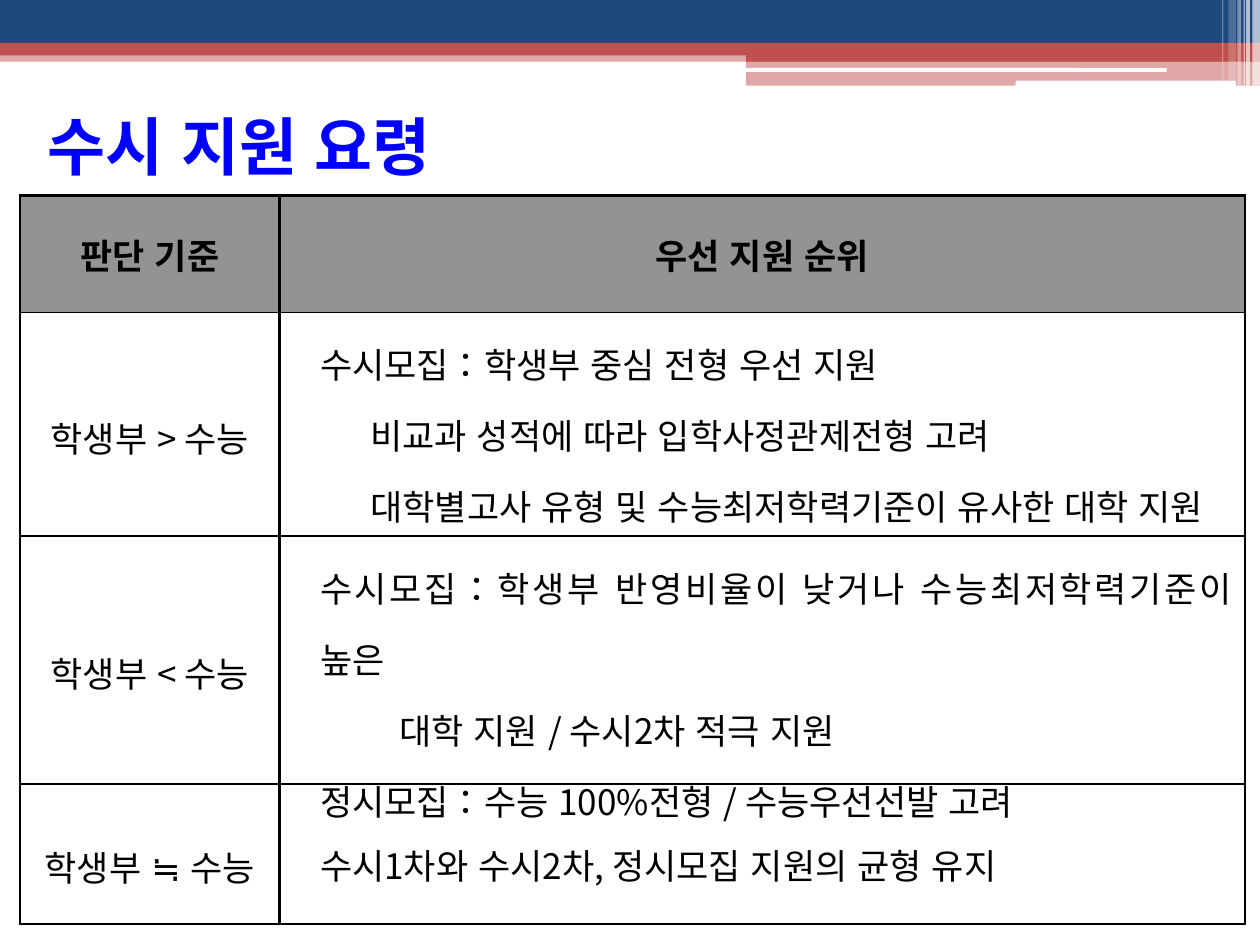
from lxml.etree import SubElement
from pptx import Presentation
from pptx.dml.color import RGBColor
from pptx.enum.lang import MSO_LANGUAGE_ID
from pptx.enum.shapes import MSO_SHAPE
from pptx.enum.text import MSO_ANCHOR, PP_ALIGN
from pptx.oxml.ns import qn
from pptx.util import Inches, Pt

FONT = "Noto Sans CJK KR"
NAVY, RED, WHITE, BLACK = "1F497D", "C0504D", "FFFFFF", "000000"
BLUE, GRAY = "0000FF", "939393"

# Banner bars: left, top, width, height, colour, opacity in percent
BARS = [
    (0, 0.4, 10, 0.09, RED, 50),
    (0, 0, 10, 0.34, NAVY, 100),
    (0, 0.34, 10, 0.1, RED, 100),
    (5.92, 0.39, 4.08, 0.1, RED, 100),
    (5.92, 0.48, 4.08, 0.2, RED, 50),
]
# White rounded strips: left, top, width, height
STRIPS = [(5.91, 0.54, 3.35, 0.03), (8.06, 0.64, 1.75, 0.05)]
# White vertical stripes: left, width, height, opacity in percent
STRIPES = [
    (9.94, 0.06, 0.68, 65),
    (9.89, 0.03, 0.68, 65),
    (9.87, 0.01, 0.68, 60),
    (9.82, 0.03, 0.68, 40),
    (9.75, 0.06, 0.64, 20),
    (9.7, 0.01, 0.64, 30),
]

COLS = [2.06, 7.66]
ROWS = [0.93, 1.77, 1.97, 1.11]
HEADERS = ["판단 기준", "우선 지원 순위"]
# Criterion, bottom margin of the advice, advice lines as (extra indent, text)
ADVICE = [
    ("학생부 > 수능", 0.04, [
        (0, "수시모집：학생부 중심 전형 우선 지원"),
        (0.4, "비교과 성적에 따라 입학사정관제전형 고려"),
        (0.4, "대학별고사 유형 및 수능최저학력기준이 유사한 대학 지원"),
    ]),
    # The last line of this cell runs over the border below
    ("학생부 < 수능", -0.33, [
        (0, "수시모집：학생부 반영비율이 낮거나 수능최저학력기준이 높은 "),
        (0.63, "대학 지원 / 수시2차 적극 지원"),
        (0, "정시모집：수능 100%전형 / 수능우선선발 고려"),
    ]),
    ("학생부 ≒ 수능", 0.04, [
        (0, "수시1차와 수시2차, 정시모집 지원의 균형 유지"),
    ]),
]


def rgb(color):
    return RGBColor.from_string(color)


def add_bar(slide, x, y, w, h, color, opacity=100, kind=MSO_SHAPE.RECTANGLE):
    s = slide.shapes.add_shape(kind, Inches(x), Inches(y), Inches(w), Inches(h))
    s.shadow.inherit = False
    s.fill.solid()
    s.fill.fore_color.rgb = rgb(color)
    s.line.fill.background()
    if opacity < 100:
        clr = s.fill._xPr.find(qn("a:solidFill"))[0]
        SubElement(clr, qn("a:alpha"), val=str(opacity * 1000))


def write(p, text, size, color=BLACK, bold=False, align=PP_ALIGN.CENTER,
          spacing=1.0, indent=0):
    r = p.add_run()
    r.text = text
    r.font.language_id = MSO_LANGUAGE_ID.KOREAN
    p.alignment = align
    p.line_spacing = spacing
    p.font.name = FONT
    p.font.size = Pt(size)
    p.font.bold = bold
    p.font.color.rgb = rgb(color)
    SubElement(p.font._rPr, qn("a:ea"), typeface=FONT)
    pPr = p._p.get_or_add_pPr()
    pPr.set("marL", str(Inches(indent)))
    pPr.set("indent", "0")


def add_title(slide, text):
    s = slide.shapes.title
    s.left, s.top = Inches(0.28), Inches(0.8)
    s.width, s.height = Inches(3.54), Inches(0.71)
    tf = s.text_frame
    tf.vertical_anchor = MSO_ANCHOR.MIDDLE
    write(tf.paragraphs[0], text, 36, BLUE, True, PP_ALIGN.LEFT)


def style_cell(cell, row, fill=None, bottom=0.04):
    cell.vertical_anchor = MSO_ANCHOR.MIDDLE
    cell.margin_top, cell.margin_bottom = Inches(0.04), Inches(bottom)
    # Lines between rows are thinner than the others
    top_w = 1 if row > 0 else 1.7
    bottom_w = 1 if row < len(ROWS) - 1 else 1.7
    tcPr = cell._tc.get_or_add_tcPr()
    for side, w in (("L", 1.7), ("R", 1.7), ("T", top_w), ("B", bottom_w)):
        ln = SubElement(tcPr, qn(f"a:ln{side}"), w=str(Pt(w)))
        SubElement(SubElement(ln, qn("a:solidFill")), qn("a:srgbClr"), val=BLACK)
    if fill:
        cell.fill.solid()
        cell.fill.fore_color.rgb = rgb(fill)
    else:
        cell.fill.background()


def add_advice_table(slide):
    table = slide.shapes.add_table(
        len(ROWS), len(COLS), Inches(0.16), Inches(1.55),
        Inches(sum(COLS)), Inches(sum(ROWS))).table
    for col, w in zip(table.columns, COLS):
        col.width = Inches(w)
    for row, h in zip(table.rows, ROWS):
        row.height = Inches(h)

    # Header row
    for c, text in enumerate(HEADERS):
        cell = table.cell(0, c)
        style_cell(cell, 0, GRAY)
        write(cell.text_frame.paragraphs[0], text, 20, bold=True)

    # One row for each criterion
    for r, (criterion, bottom, lines) in enumerate(ADVICE, start=1):
        left, right = table.cell(r, 0), table.cell(r, 1)
        style_cell(left, r)
        style_cell(right, r, bottom=bottom)
        write(left.text_frame.paragraphs[0], criterion, 20, spacing=1.5)
        tf = right.text_frame
        for i, (extra, text) in enumerate(lines):
            p = tf.add_paragraph() if i else tf.paragraphs[0]
            write(p, text, 20, align=PP_ALIGN.JUSTIFY, spacing=1.4,
                  indent=0.22 + extra)


def main():
    prs = Presentation()
    prs.slide_width, prs.slide_height = Inches(10), Inches(7.5)
    slide = prs.slides.add_slide(prs.slide_layouts[5])

    # Banner
    for bar in BARS:
        add_bar(slide, *bar)
    for strip in STRIPS:
        add_bar(slide, *strip, WHITE, kind=MSO_SHAPE.ROUNDED_RECTANGLE)
    for x, w, h, opacity in STRIPES:
        add_bar(slide, x, 0, w, h, WHITE, opacity)

    # Content
    add_title(slide, "수시 지원 요령")
    add_advice_table(slide)
    prs.save("out.pptx")


if __name__ == "__main__":
    main()
